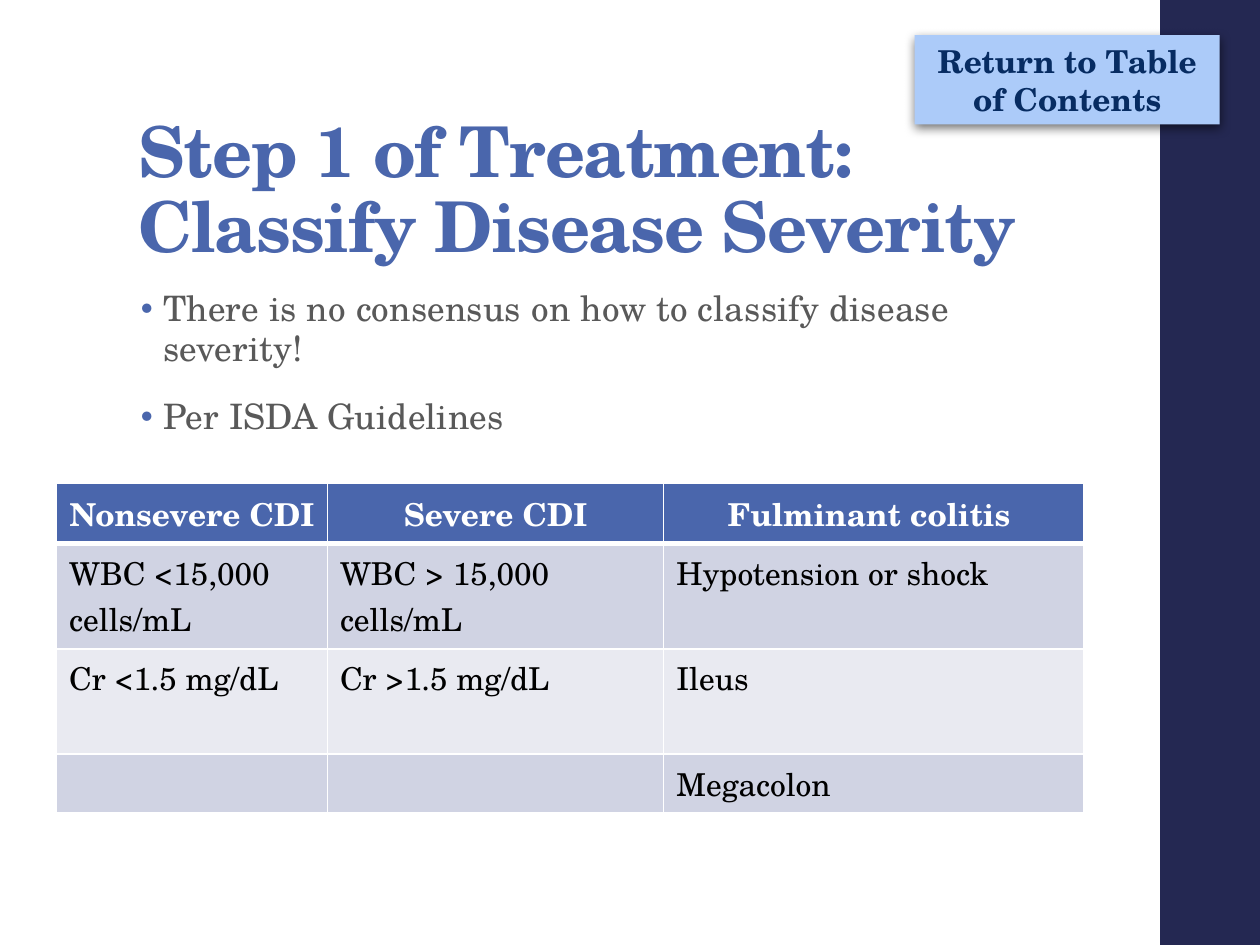
from dataclasses import dataclass

from lxml.etree import SubElement
from pptx import Presentation
from pptx.dml.color import RGBColor
from pptx.enum.shapes import MSO_SHAPE as Shape
from pptx.enum.text import MSO_ANCHOR as Anchor, PP_ALIGN as Align
from pptx.oxml.ns import qn
from pptx.util import Cm, Pt


@dataclass(frozen=True)
class Theme:
    font: str = "TeX Gyre Schola"
    navy: str = "242852"
    blue: str = "4A66AC"
    sky: str = "ACCBF9"
    ink: str = "072C62"
    grey: str = "595959"
    black: str = "000000"
    white: str = "FFFFFF"
    bands: tuple = ("D0D3E3", "E9EAF1")
    title_size: int = 40
    body_size: int = 20
    label_size: int = 18


def add_node(parent, tag, **attributes):
    return SubElement(parent, qn(tag), {key: str(value) for key, value in attributes.items()})


def add_color(parent, color):
    return add_node(add_node(parent, "a:solidFill"), "a:srgbClr", val=color)


class SlideBuilder:
    def __init__(self, page, theme):
        self.page = page
        self.theme = theme

    def style(self, para, size, color, bold=False, tracking=None):
        """Set the paragraph's font; tracking is in hundredths of a point."""
        font = para.font
        font.name, font.size, font.bold = self.theme.font, Pt(size), bold
        font.color.rgb = RGBColor.from_string(color)
        if tracking is not None:
            for span in para.runs:
                span._r.get_or_add_rPr().set("spc", str(tracking))

    def rectangle(self, left, top, width, height, color):
        box = self.page.shapes.add_shape(
            Shape.RECTANGLE, Cm(left), Cm(top), Cm(width), Cm(height))
        box.shadow.inherit = False
        box.fill.solid()
        box.fill.fore_color.rgb = RGBColor.from_string(color)
        box.line.fill.background()
        return box

    def button(self, text, *place):
        box = self.rectangle(*place, self.theme.sky)
        effects = box._element.spPr.find(qn("a:effectLst"))
        shadow = add_node(effects, "a:outerShdw", blurRad=Pt(6), dist=Pt(2),
                          dir=90 * 60000, rotWithShape=0)
        add_node(add_node(shadow, "a:srgbClr", val=self.theme.black), "a:alpha", val=55000)
        box.text_frame.word_wrap = True
        para = box.text_frame.paragraphs[0]
        para.text, para.alignment = text, Align.CENTER
        self.style(para, self.theme.label_size, self.theme.ink, bold=True)

    def text_box(self, left, top, width, height, anchor=Anchor.TOP):
        box = self.page.shapes.add_textbox(Cm(left), Cm(top), Cm(width), Cm(height))
        frame = box.text_frame
        frame.word_wrap, frame.vertical_anchor = True, anchor
        return frame

    def title(self, text, *place):
        para = self.text_box(*place, anchor=Anchor.BOTTOM).paragraphs[0]
        para.text, para.line_spacing = text, 0.9
        self.style(para, self.theme.title_size, self.theme.blue, bold=True, tracking=-70)

    def bullets(self, items, *place):
        frame = self.text_box(*place)
        for index, item in enumerate(items):
            para = frame.add_paragraph() if index else frame.paragraphs[0]
            para.text, para.line_spacing = item, 0.95
            para.space_before, para.space_after = Pt(14 if index else 0), Pt(2)
            properties = para._p.get_or_add_pPr()
            properties.set("marL", str(Cm(0.5)))
            properties.set("indent", str(Cm(-0.5)))
            add_node(add_node(properties, "a:buClr"), "a:srgbClr", val=self.theme.blue)
            add_node(properties, "a:buSzPct", val=80000)
            add_node(properties, "a:buFont", typeface=self.theme.font)
            add_node(properties, "a:buChar", char="•")
            self.style(para, self.theme.body_size, self.theme.grey, tracking=10)

    def table(self, rows, left, top, widths, heights):
        grid = self.page.shapes.add_table(
            len(rows), len(widths), Cm(left), Cm(top),
            Cm(sum(widths)), Cm(sum(heights))).table
        for column, width in zip(grid.columns, widths):
            column.width = Cm(width)
        for index, (row, height, texts) in enumerate(zip(grid.rows, heights, rows)):
            row.height = Cm(height)
            for cell, text in zip(row.cells, texts):
                self.cell(cell, text, index)

    def cell(self, cell, text, row):
        theme, header = self.theme, row == 0
        para = cell.text_frame.paragraphs[0]
        para.text = text
        para.alignment = Align.CENTER if header else Align.LEFT
        self.style(para, theme.label_size, theme.white if header else theme.black, header)
        properties = cell._tc.get_or_add_tcPr()
        thick_side = {0: "B", 1: "T"}.get(row)
        for side in "LRTB":
            border = add_node(properties, f"a:ln{side}", w=Pt(3 if side == thick_side else 1))
            add_color(border, theme.white)
        cell.fill.solid()
        fill = theme.blue if header else theme.bands[(row - 1) % 2]
        cell.fill.fore_color.rgb = RGBColor.from_string(fill)


def main():
    deck = Presentation()
    deck.slide_width, deck.slide_height = Cm(25.4), Cm(19.05)
    theme = Theme()
    builder = SlideBuilder(deck.slides.add_slide(deck.slide_layouts[6]), theme)
    builder.rectangle(23.39, 0, 2.01, 19.05, theme.navy)
    builder.title("Step 1 of Treatment:\vClassify Disease Severity", 2.54, 1.85, 20.19, 3.68)
    builder.bullets(
        ["There is no consensus on how to classify disease severity!", "Per ISDA Guidelines"],
        2.54, 5.72, 17.91, 5.08)
    builder.table(
        [("Nonsevere CDI", "Severe CDI", "Fulminant colitis "),
         ("WBC <15,000 cells/mL", "WBC > 15,000 cells/mL", "Hypotension or shock"),
         ("Cr <1.5 mg/dL", "Cr >1.5 mg/dL", "Ileus"),
         ("", "", "Megacolon")],
        1.14, 9.74, widths=(5.46, 6.78, 8.46), heights=(1.22, 2.12, 2.12, 1.19))
    builder.button("Return to Table of Contents", 18.44, 0.71, 6.15, 1.8)
    deck.save("out.pptx")


if __name__ == "__main__":
    main()
